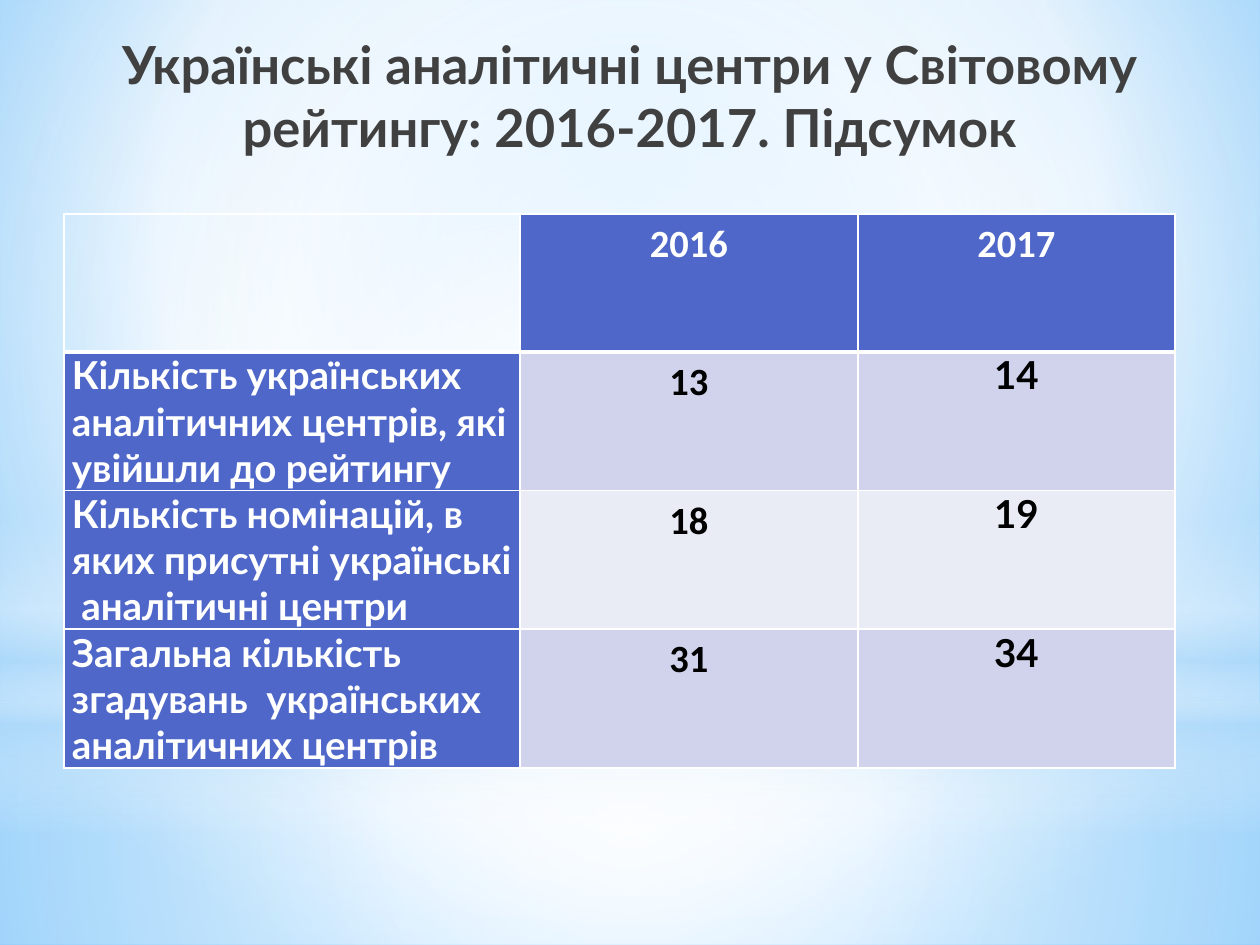
import pptx
import pptx.dml.color
import pptx.enum.shapes
import pptx.enum.text
import pptx.oxml
import pptx.oxml.ns
import pptx.util
from lxml import etree

TITLE = "Українські аналітичні центри у Світовому рейтингу: 2016-2017. Підсумок"
ROWS = [
    ("", "2016", "2017"),
    ("Кількість українських  аналітичних центрів, які увійшли до рейтингу", "13", "14"),
    ("Кількість номінацій, в яких присутні українські  аналітичні центри", "18", "19"),
    ("Загальна кількість згадувань  українських  аналітичних центрів", "31", "34"),
]
THEME = {
    "title": "404040", "header": "4E67C8", "light": "FFFFFF", "dark": "000000",
    "bands": ("D0D3EB", "E9EBF5"), "sky": "B4DCFA",
    "title_size": 30, "table_size": 22, "heading_font": "Lato", "number_font": "Calibri",
}
WHITE, SKY = THEME["light"], THEME["sky"]
CENTRE = (50, 50, 50, 50)
BACKGROUND = [(0, "9ED5FF", 100), (60, WHITE, 100), (100, "5BB9FF", 100)]
RECTANGLE = pptx.enum.shapes.MSO_SHAPE.RECTANGLE
OVAL = pptx.enum.shapes.MSO_SHAPE.OVAL
GLOWS = [
    (RECTANGLE, (0, 703, 1260, 242), [(0, WHITE, 91), (37, WHITE, 76), (100, SKY, 79)], CENTRE),
    (RECTANGLE, (0, 0, 1260, 703), [(0, WHITE, 89), (48, WHITE, 62), (100, SKY, 79)], CENTRE),
    (RECTANGLE, (0, 519, 1260, 315), [(0, WHITE, 0), (29, WHITE, 30), (45, SKY, 40),
                                      (55, WHITE, 26), (65, SKY, 60), (100, WHITE, 0)], None),
    (OVAL, (0, 220, 1260, 703), [(0, WHITE, 100), (56, WHITE, 0)], CENTRE),
]
TITLE_BOX = (0, 26, 1260, 129)
TABLE_LEFT, TABLE_TOP, ROW_HEIGHT = 64, 214, 138
COLUMN_WIDTHS = (456, 338, 317)
CELL_INSET = 8
ALIGN = pptx.enum.text.PP_ALIGN


def px(value):
    return pptx.util.Emu(round(value * 914400 / 126))


def rgb(value):
    return pptx.dml.color.RGBColor.from_string(value)


def add_element(parent, tag, **attributes):
    element = etree.SubElement(parent, pptx.oxml.ns.qn(tag))
    for name, value in attributes.items():
        element.set(name, str(value))
    return element


def set_gradient(fill, holder, stops, focus):
    fill.gradient()
    gradient = next(holder.iter(pptx.oxml.ns.qn("a:gradFill")))
    for child in list(gradient):
        gradient.remove(child)
    stop_list = add_element(gradient, "a:gsLst")
    for position, color, alpha in stops:
        stop = add_element(stop_list, "a:gs", pos=position * 1000)
        color_element = add_element(stop, "a:srgbClr", val=color)
        add_element(color_element, "a:alpha", val=alpha * 1000)
    if focus:
        circle = add_element(gradient, "a:path", path="circle")
        sides = {side: value * 1000 for side, value in zip("ltrb", focus)}
        add_element(circle, "a:fillToRect", **sides)
    else:
        add_element(gradient, "a:lin", ang=5400000, scaled=0)


def write_text(frame, text, *, font, size, color, align, line_spacing=None, space_after=None):
    frame.word_wrap = True
    paragraph = frame.paragraphs[0]
    paragraph.alignment = align
    paragraph.line_spacing = line_spacing
    paragraph.space_after = space_after
    run = paragraph.add_run()
    run.text = text
    run.font.name = font
    run.font.size = pptx.util.Pt(size)
    run.font.bold = True
    run.font.color.rgb = rgb(color)


def set_borders(cell, bottom_width):
    properties = cell._tc.get_or_add_tcPr()
    widths = {"a:lnL": 1, "a:lnR": 1, "a:lnT": 1, "a:lnB": bottom_width}
    for index, (tag, width) in enumerate(widths.items()):
        line = add_element(properties, tag, w=pptx.util.Pt(width))
        add_element(add_element(line, "a:solidFill"), "a:srgbClr", val=WHITE)
        properties.insert(index, line)


def format_cell(cell, text, row, column):
    cell.margin_left = cell.margin_right = px(CELL_INSET)
    cell.margin_top = cell.margin_bottom = 0
    is_header = row == 0 or column == 0
    if text:
        cell.fill.solid()
        band = THEME["bands"][(row - 1) % 2]
        cell.fill.fore_color.rgb = rgb(THEME["header"] if is_header else band)
        is_spaced = row == 0 or column == 1
        write_text(
            cell.text_frame, text,
            font=THEME["number_font" if is_spaced else "heading_font"],
            size=THEME["table_size"],
            color=THEME["light" if is_header else "dark"],
            align=ALIGN.CENTER if column else ALIGN.LEFT,
            line_spacing=1.15 if is_spaced else None,
            space_after=pptx.util.Pt(10) if is_spaced else None,
        )
    else:
        cell.fill.background()
    set_borders(cell, 1 if row else 3)


def add_table(slide):
    frame = slide.shapes.add_table(
        len(ROWS), len(COLUMN_WIDTHS), px(TABLE_LEFT), px(TABLE_TOP),
        px(sum(COLUMN_WIDTHS)), px(ROW_HEIGHT * len(ROWS)))
    table = frame.table
    table.first_row = table.horz_banding = False
    for column, width in zip(table.columns, COLUMN_WIDTHS):
        column.width = px(width)
    for row, texts in enumerate(ROWS):
        table.rows[row].height = px(ROW_HEIGHT)
        for column, text in enumerate(texts):
            format_cell(table.cell(row, column), text, row, column)


def main():
    presentation = pptx.Presentation()
    presentation.slide_width, presentation.slide_height = px(1260), px(945)
    slide = presentation.slides.add_slide(presentation.slide_layouts[6])
    set_gradient(slide.background.fill, slide._element, BACKGROUND, (20, 10, 20, 60))
    for kind, box, stops, focus in GLOWS:
        shape = slide.shapes.add_shape(kind, *map(px, box))
        shape.shadow.inherit = False
        shape.line.fill.background()
        set_gradient(shape.fill, shape._element, stops, focus)
    title = slide.shapes.add_textbox(*map(px, TITLE_BOX))
    write_text(title.text_frame, TITLE, font=THEME["heading_font"], size=THEME["title_size"],
               color=THEME["title"], align=ALIGN.CENTER)
    add_table(slide)
    presentation.save("out.pptx")


if __name__ == "__main__":
    main()
